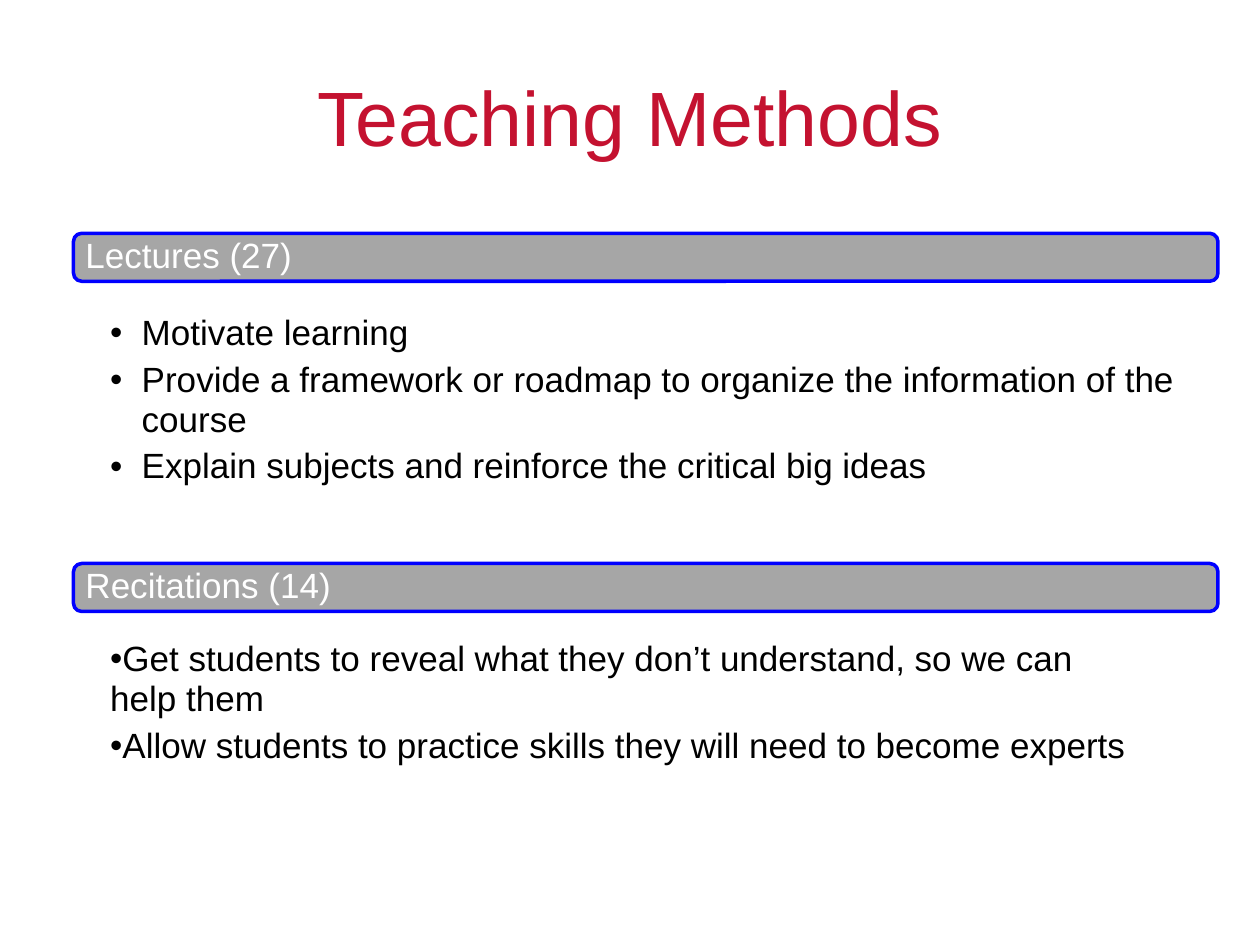
from lxml.etree import SubElement
from pptx import Presentation
from pptx.dml.color import RGBColor
from pptx.enum.shapes import MSO_SHAPE as Shape
from pptx.enum.text import MSO_ANCHOR as Anchor, PP_ALIGN as Align
from pptx.oxml.ns import qn
from pptx.util import Pt

COLORS = {"title": "C41230", "bar": "A6A6A6", "border": "0000FF",
          "label": "FFFFFF", "text": "000000"}
LEFT, WIDTH, BAR_HEIGHT = 42, 654, 27.4
SECTIONS = [
    # heading, bar top, list top, list height, hanging indent, bullets
    ("Lectures (27)", 133.3, 179, 115, 18, [
        "Motivate learning",
        "Provide a framework or roadmap to organize the information of the course",
        "Explain subjects and reinforce the critical big ideas"]),
    ("Recitations (14)", 322, 365.5, 96, 0, [
        "Get students to reveal what they don’t understand, so we can\vhelp them",
        "Allow students to practice skills they will need to become experts"]),
]


def color(name):
    return RGBColor.from_string(COLORS[name])


def style(para, size, name):
    for span in para.runs:
        span.font.name = "Arial"
        span.font.size = Pt(size)
        span.font.color.rgb = color(name)


def set_margins(frame, left, top, right, bottom):
    frame.word_wrap = True
    frame.margin_left, frame.margin_top = Pt(left), Pt(top)
    frame.margin_right, frame.margin_bottom = Pt(right), Pt(bottom)


def add_title(page, left, top, width, height):
    title = page.shapes.title
    title.left, title.top = Pt(left), Pt(top)
    title.width, title.height = Pt(width), Pt(height)
    frame = title.text_frame
    frame.text = "Teaching Methods"
    set_margins(frame, 7.2, 3, 7.2, 3.6)
    frame.vertical_anchor = Anchor.MIDDLE
    para = frame.paragraphs[0]
    para.alignment = Align.CENTER
    style(para, 44, "title")


def add_bar(page, left, top, width, height, heading):
    bar = page.shapes.add_shape(Shape.ROUNDED_RECTANGLE, Pt(left), Pt(top),
                                Pt(width), Pt(height))
    bar.adjustments[0] = 0.17
    bar.shadow.inherit = False
    bar.fill.solid()
    bar.fill.fore_color.rgb = color("bar")
    bar.line.color.rgb = color("border")
    bar.line.width = Pt(2)
    frame = bar.text_frame
    frame.text = heading
    set_margins(frame, 5.5, 0, 6.5, 0)
    frame.vertical_anchor = Anchor.MIDDLE
    para = frame.paragraphs[0]
    para.alignment = Align.LEFT
    para.line_spacing = 0.9
    style(para, 20, "label")


def add_bullets(page, left, top, width, height, indent, bullets):
    box = page.shapes.add_textbox(Pt(left), Pt(top), Pt(width), Pt(height))
    frame = box.text_frame
    set_margins(frame, 21, 0, 13.7, 0)
    for index, bullet in enumerate(bullets):
        para = frame.paragraphs[0] if index == 0 else frame.add_paragraph()
        para.text = bullet
        para.line_spacing = 0.95
        para.space_after = Pt(4)
        properties = para._p.get_or_add_pPr()
        properties.set("marL", str(Pt(indent)))
        properties.set("indent", str(Pt(-indent)))
        SubElement(properties, qn("a:buFont"), typeface="Arial")
        SubElement(properties, qn("a:buChar"), char="•")
        style(para, 20, "text")


def main():
    deck = Presentation()
    deck.slide_width, deck.slide_height = Pt(720), Pt(540)
    page = deck.slides.add_slide(deck.slide_layouts[5])
    add_title(page, 36, 24.5, 648, 83.5)
    # Each section is a heading bar above its bullet list
    for heading, bar_top, list_top, list_height, indent, bullets in SECTIONS:
        add_bar(page, LEFT, bar_top, WIDTH, BAR_HEIGHT, heading)
        add_bullets(page, LEFT, list_top, WIDTH, list_height, indent, bullets)
    deck.save("out.pptx")


if __name__ == "__main__":
    main()
